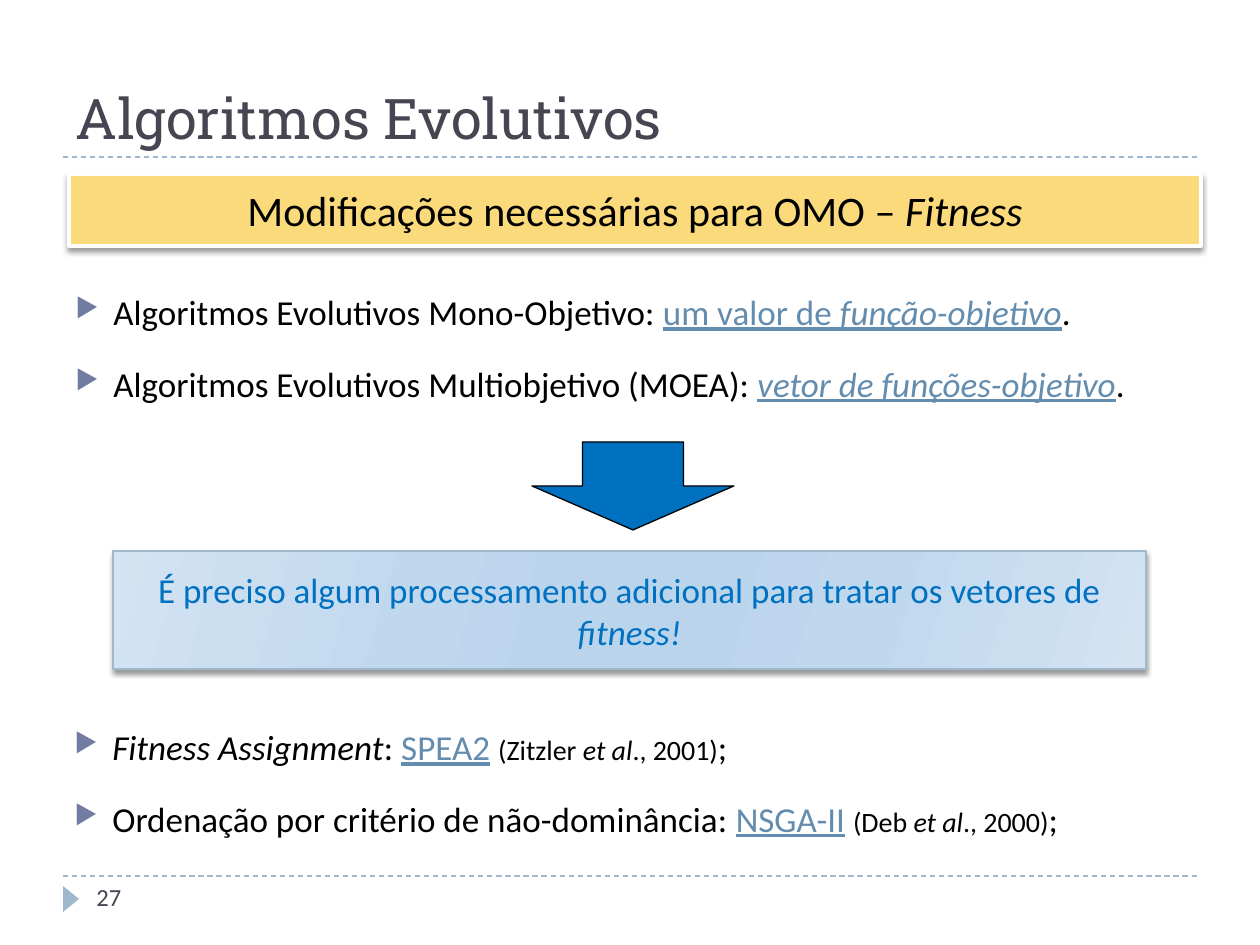
from lxml import etree
from pptx import Presentation
from pptx.dml.color import RGBColor
from pptx.enum.dml import MSO_LINE
from pptx.enum.shapes import MSO_CONNECTOR, MSO_SHAPE
from pptx.enum.text import MSO_ANCHOR, PP_ALIGN
from pptx.oxml.ns import qn
from pptx.util import Emu, Pt

TOP, MIDDLE, BOTTOM = MSO_ANCHOR.TOP, MSO_ANCHOR.MIDDLE, MSO_ANCHOR.BOTTOM
LEFT, CENTER = PP_ALIGN.LEFT, PP_ALIGN.CENTER
RECT, ARROW, TRIANGLE = MSO_SHAPE.RECTANGLE, MSO_SHAPE.DOWN_ARROW, MSO_SHAPE.ISOSCELES_TRIANGLE

COLORS = {
    "black": "000000", "white": "FFFFFF", "title": "464653", "rule": "9FB8CD",
    "link": "638CAE", "bullet": "727CA3", "banner": "FADA7A", "blue": "0070C0",
}
GRADIENT = [(0, "D3E3F2"), (30, "C0D8EE"), (45, "BAD4EC"),
            (55, "BAD4EC"), (73, "C0D8EE"), (100, "D3E3F2")]

# Content: each paragraph is a list of (text, style) runs;
# style letters: i = italic, u = underlined key term, s = small
TITLE = [("Algoritmos Evolutivos", "")]
BANNER = [("Modificações necessárias para OMO – ", ""), ("Fitness", "i")]
NOTE = [("É preciso algum processamento adicional para tratar os vetores de ", ""),
        ("fitness!", "i")]
GOALS = [
    [("Algoritmos Evolutivos Mono-Objetivo: ", ""), ("um valor de ", "u"),
     ("função-objetivo", "ui"), (".", "")],
    [("Algoritmos Evolutivos Multiobjetivo (MOEA): ", ""),
     ("vetor de funções-objetivo", "ui"), (".", "")],
]
METHODS = [
    [("Fitness Assignment", "i"), (": ", ""), ("SPEA2", "u"), (" ", ""),
     ("(Zitzler ", "s"), ("et al", "si"), ("., 2001)", "s"), (";", "")],
    [("Ordenação por critério de não-dominância: ", ""), ("NSGA-II", "u"), (" ", ""),
     ("(Deb ", "s"), ("et al", "si"), ("., 2000)", "s"), (";", "")],
]
NUMBER = [("27", "")]


def px(n):
    return Emu(round(n * 914400 / 126))


def rgb(name):
    return RGBColor.from_string(COLORS[name])


def add_xml(parent, tag, **attrs):
    return etree.SubElement(parent, qn(tag), attrs)


def add_bullet(para):
    props = para._p.get_or_add_pPr()
    props.set("marL", str(px(38)))
    props.set("indent", str(-px(38)))
    add_xml(add_xml(props, "a:buClr"), "a:srgbClr", val=COLORS["bullet"])
    add_xml(props, "a:buSzPct", val="76000")
    add_xml(props, "a:buChar", char="▶")


def write(shape, paras, size, color="black", font="Calibri",
          align=LEFT, anchor=TOP, bullets=False):
    frame = shape.text_frame
    frame.word_wrap = True
    frame.vertical_anchor = anchor
    for i, runs in enumerate(paras):
        para = frame.add_paragraph() if i else frame.paragraphs[0]
        para.alignment = align
        if bullets:
            para.line_spacing = 1.2
            para.space_before = Pt(6 if i else 0)
            para.space_after = Pt(6)
            add_bullet(para)
        para.font.name = font
        para.font.size = Pt(size)
        para.font.color.rgb = rgb(color)
        for text, style in runs:
            run = para.add_run()
            run.text = text
            if "i" in style:
                run.font.italic = True
            if "s" in style:
                run.font.size = Pt(16)
            if "u" in style:
                run.font.underline = True
                run.font.color.rgb = rgb("link")


def add_text(box, paras, size, **opts):
    write(slide.shapes.add_textbox(*map(px, box)), paras, size, **opts)


def add_block(kind, box, fill=None, line=None, width=0.75):
    shape = slide.shapes.add_shape(kind, *map(px, box))
    shape.shadow.inherit = False
    if fill:
        shape.fill.solid()
        shape.fill.fore_color.rgb = rgb(fill)
    if line:
        shape.line.color.rgb = rgb(line)
        shape.line.width = Pt(width)
    else:
        shape.line.fill.background()
    return shape


def add_shadow(shape):
    effects = shape._element.spPr.find(qn("a:effectLst"))
    outer = add_xml(effects, "a:outerShdw", blurRad=str(Pt(3)), dist=str(Pt(2)),
                    dir="5400000", rotWithShape="0")
    tint = add_xml(outer, "a:srgbClr", val=COLORS["black"])
    add_xml(tint, "a:alpha", val="40000")


def add_gradient(shape):
    shape.fill.gradient()
    grad = shape._element.spPr.find(qn("a:gradFill"))
    stops = grad.find(qn("a:gsLst"))
    for stop in list(stops):
        stops.remove(stop)
    for pos, color in GRADIENT:
        add_xml(add_xml(stops, "a:gs", pos=str(pos * 1000)), "a:srgbClr", val=color)
    grad.find(qn("a:lin")).set("ang", str(16 * 60000))


deck = Presentation()
deck.slide_width, deck.slide_height = px(1260), px(945)
slide = deck.slides.add_slide(deck.slide_layouts[6])

# Dashed rules and page marker
for y in (876, 157):
    rule = slide.shapes.add_connector(MSO_CONNECTOR.STRAIGHT, px(63), px(y), px(1197), px(y))
    rule.line.color.rgb = rgb("rule")
    rule.line.width = Pt(0.75)
    rule.line.dash_style = MSO_LINE.DASH
    add_xml(rule._element.spPr, "a:effectLst")
marker = add_block(TRIANGLE, (58, 891, 26, 16), "rule")
marker.rotation = 90

# Title and first list
add_text((63, 21, 1134, 136), [TITLE], 32, color="title", font="Roboto Slab", anchor=BOTTOM)
add_text((63, 276, 1162, 158), GOALS, 20, bullets=True)

# Banner
banner = add_block(RECT, (69, 174, 1132, 72), "banner", "white", 2)
add_shadow(banner)
write(banner, [BANNER], 24, align=CENTER, anchor=MIDDLE)

# Conclusion box with arrow
note = add_block(RECT, (113, 551, 1033, 118), line="rule")
add_gradient(note)
add_shadow(note)
write(note, [NOTE], 20, color="blue", align=CENTER, anchor=MIDDLE)
add_block(ARROW, (532, 442, 202, 88), "blue", "black")

# Second list and slide number
add_text((62, 711, 1134, 147), METHODS, 20, bullets=True)
add_text((84, 876, 273, 50), [NUMBER], 14, color="title")

deck.save("out.pptx")
